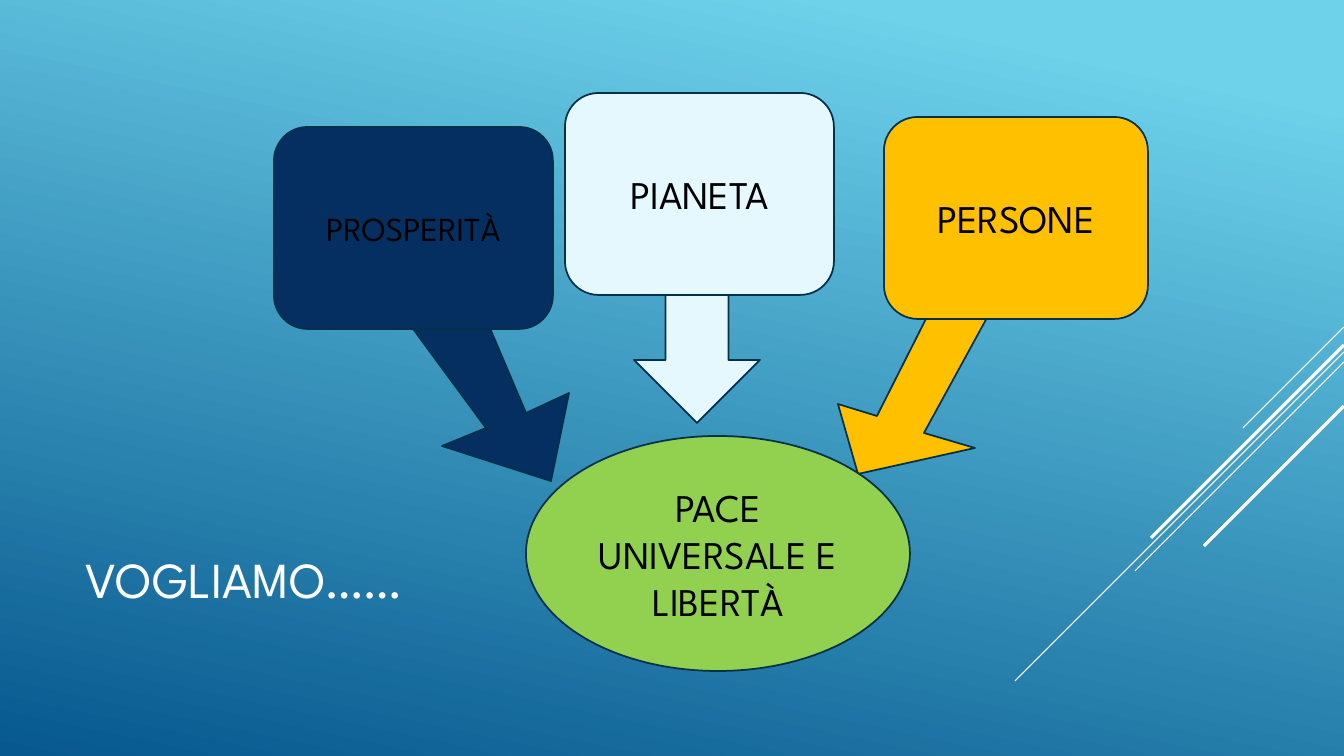
from lxml.etree import SubElement
from pptx import Presentation
from pptx.dml.color import RGBColor
from pptx.enum.shapes import MSO_CONNECTOR, MSO_SHAPE
from pptx.enum.text import MSO_ANCHOR, PP_ALIGN
from pptx.oxml.ns import qn
from pptx.util import Pt

PX = 914400 / 100.8
WIDTH, HEIGHT = 1344, 756

SKY = RGBColor(0x6E, 0xD2, 0xEB)
OCEAN = RGBColor(0x06, 0x58, 0x8E)
OUTLINE = RGBColor(0x04, 0x31, 0x48)
NAVY = RGBColor(0x05, 0x2F, 0x61)
ICE = RGBColor(0xE4, 0xF8, 0xFD)
AMBER = RGBColor(0xFF, 0xC0, 0x00)
GREEN = RGBColor(0x92, 0xD0, 0x50)
BLACK = RGBColor(0x00, 0x00, 0x00)
WHITE = RGBColor(0xFF, 0xFF, 0xFF)

STREAKS = [(327, 101, 0.75), (352, 329, 0.75), (362, 209, 0.75),
           (345, 193, 2.25), (406, 140, 2.25)]
PERSONE_ARROW = [(838, 404), (877, 416), (927, 317), (988, 316),
                 (924, 433), (975, 448), (858, 474)]
PROSPERITA_ARROW = [(442, 446), (486, 428), (408, 322), (481, 307),
                    (526, 413), (569, 393), (551, 481)]


def emu(*lengths):
    return [round(length * PX) for length in lengths]


class Painter:
    """Draws the elements of one slide in a shared style."""

    font_name = "League Spartan"

    def __init__(self, slide):
        self.slide = slide
        self.shapes = slide.shapes

    def background(self, start, end, angle):
        fill = self.slide.background.fill
        fill.gradient()
        fill.gradient_angle = 360 - angle
        for stop, color, position in zip(fill.gradient_stops, (start, end), (0.1, 1)):
            stop.color.rgb = color
            stop.position = position

    def streak(self, top, run, weight):
        ends = emu(WIDTH, top, WIDTH - run, top + run)
        line = self.shapes.add_connector(MSO_CONNECTOR.STRAIGHT, *ends)
        line.line.color.rgb = WHITE
        line.line.width = Pt(weight)
        SubElement(line._element.spPr, qn("a:effectLst"))

    def paint(self, shape, color):
        shape.shadow.inherit = False
        shape.fill.solid()
        shape.fill.fore_color.rgb = color
        shape.line.color.rgb = OUTLINE
        shape.line.width = Pt(1.25)

    def slanted_arrow(self, corners, color):
        builder = self.shapes.build_freeform(*corners[0], scale=PX)
        builder.add_line_segments(corners[1:], close=True)
        self.paint(builder.convert_to_shape(), color)

    def block(self, kind, box, color, words="", size=28):
        shape = self.shapes.add_shape(kind, *emu(*box))
        self.paint(shape, color)
        if words:
            self.letter(shape, words, size, BLACK, PP_ALIGN.CENTER)

    def title(self, box, words):
        self.letter(self.shapes.add_textbox(*emu(*box)), words, 36, WHITE, PP_ALIGN.LEFT)

    def letter(self, holder, words, size, color, align):
        frame = holder.text_frame
        frame.word_wrap = True
        frame.vertical_anchor = MSO_ANCHOR.MIDDLE
        paragraph = frame.paragraphs[0]
        paragraph.text = words
        paragraph.alignment = align
        paragraph.font.name = self.font_name
        paragraph.font.size = Pt(size)
        paragraph.font.color.rgb = color


def main():
    deck = Presentation()
    deck.slide_width, deck.slide_height = emu(WIDTH, HEIGHT)
    painter = Painter(deck.slides.add_slide(deck.slide_layouts[6]))

    painter.background(SKY, OCEAN, 102)
    for streak in STREAKS:
        painter.streak(*streak)

    card = MSO_SHAPE.ROUNDED_RECTANGLE
    painter.slanted_arrow(PERSONE_ARROW, AMBER)
    painter.block(card, (884, 117, 264, 202), AMBER, "PERSONE")
    painter.block(MSO_SHAPE.OVAL, (526, 436, 384, 235), GREEN, "PACE UNIVERSALE E LIBERTÀ")
    painter.slanted_arrow(PROSPERITA_ARROW, NAVY)
    painter.block(MSO_SHAPE.DOWN_ARROW, (634, 288, 126, 135), ICE)
    painter.block(card, (565, 93, 269, 202), ICE, "PIANETA")
    painter.block(card, (274, 127, 279, 202), NAVY, "PROSPERITÀ", 24)
    painter.title((76, 495, 940, 166), "VOGLIAMO……")
    deck.save("out.pptx")


if __name__ == "__main__":
    main()
